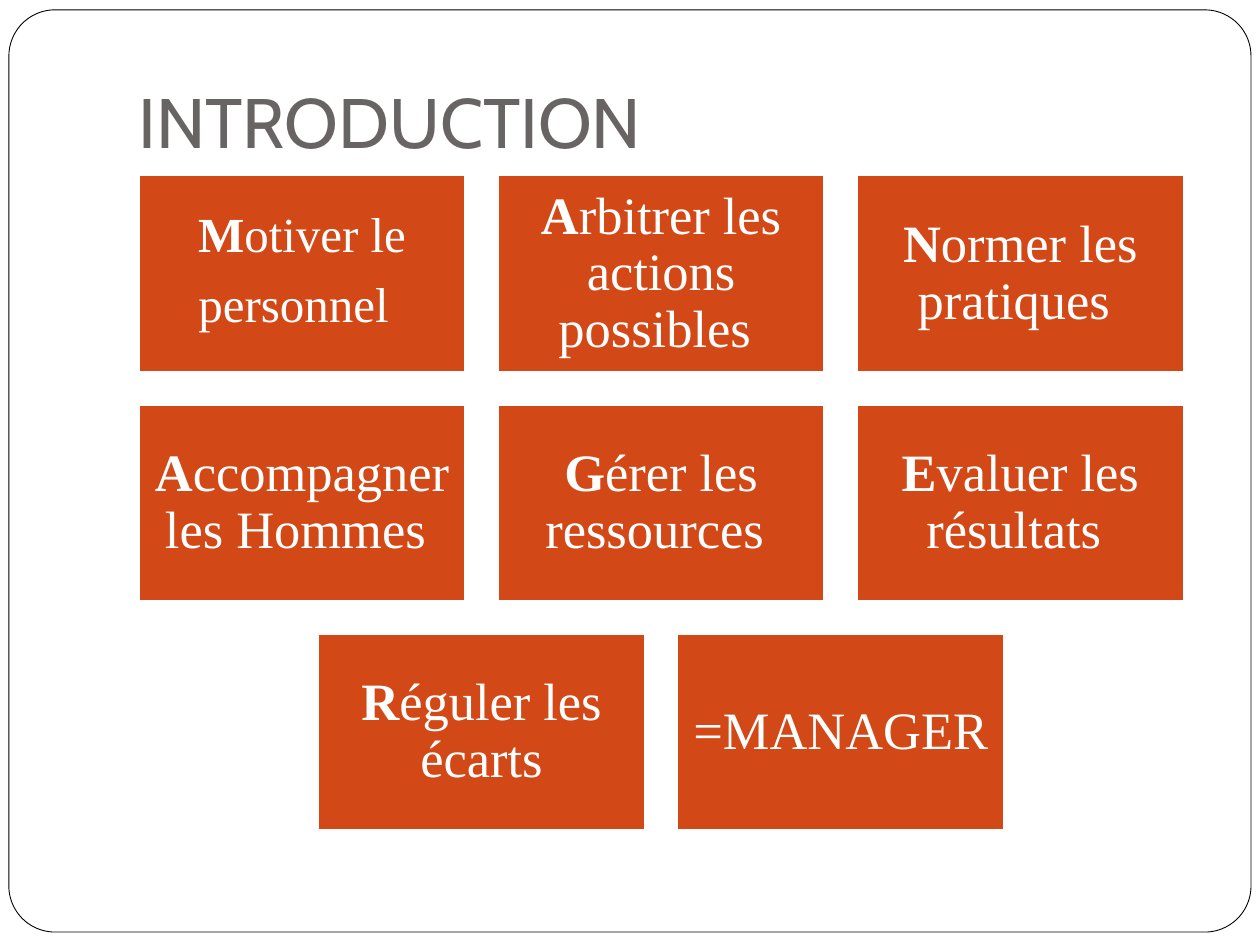
from pptx import Presentation
from pptx.dml.color import RGBColor
from pptx.enum.shapes import MSO_SHAPE
from pptx.enum.text import MSO_ANCHOR, MSO_AUTO_SIZE, PP_ALIGN
from pptx.util import Cm, Pt

COLORS = {"frame": "000000", "title": "696464", "box": "D34817", "white": "FFFFFF"}

TITLE_FRAME = {
    "word_wrap": True,
    "auto_size": MSO_AUTO_SIZE.NONE,
    "vertical_anchor": MSO_ANCHOR.BOTTOM,
    "margin_left": Cm(0.25),
    "margin_right": Cm(0.25),
    "margin_top": Cm(0.13),
    "margin_bottom": Cm(0.25),
}
BOX_FRAME = {
    "word_wrap": True,
    "vertical_anchor": MSO_ANCHOR.MIDDLE,
    "margin_left": Cm(0.3),
    "margin_right": Cm(0.3),
    "margin_top": Cm(0.3),
    "margin_bottom": Cm(0.3),
}
BOX_PARAGRAPH = {"alignment": PP_ALIGN.CENTER, "line_spacing": 0.9}

ROWS = [
    [
        [("M", 28, True), ("otiver le personnel", 28, False), (" ", 39, False)],
        [("A", 30, True), ("rbitrer les actions possibles ", 30, False)],
        [("N", 30, True), ("ormer les pratiques ", 30, False)],
    ],
    [
        [("A", 30, True), ("ccompagner les Hommes ", 30, False)],
        [("G", 30, True), ("érer les ressources ", 30, False)],
        [("E", 30, True), ("valuer les résultats ", 30, False)],
    ],
    [
        [("R", 30, True), ("éguler les écarts", 30, False)],
        [("=MANAGER", 30, False)],
    ],
]
BOX_WIDTH, BOX_HEIGHT, GAP = 6.58, 3.96, 0.66
GRID_CENTER, GRID_TOP = 13.33, 3.54


def set_values(target, values):
    for name, value in values.items():
        setattr(target, name, value)


def add_text(paragraph, text, font_name, size, color, bold=False):
    run = paragraph.add_run()
    run.text = text
    set_values(run.font, {"name": font_name, "size": Pt(size), "bold": bold})
    run.font.color.rgb = RGBColor.from_string(COLORS[color])


presentation = Presentation()
presentation.slide_width = Cm(25.4)
presentation.slide_height = Cm(19.05)
slide = presentation.slides.add_slide(presentation.slide_layouts[5])

frame = slide.shapes.add_shape(
    MSO_SHAPE.ROUNDED_RECTANGLE, Cm(0.18), Cm(0.2), Cm(25.04), Cm(18.59)
)
frame.adjustments[0] = 0.05
frame.shadow.inherit = False
frame.fill.background()
frame.line.color.rgb = RGBColor.from_string(COLORS["frame"])
frame.line.width = Pt(0.5)

title = slide.shapes.title
set_values(title, {"left": Cm(2.54), "top": Cm(0.33), "width": Cm(21.59), "height": Cm(3.2)})
set_values(title.text_frame, TITLE_FRAME)
title_paragraph = title.text_frame.paragraphs[0]
title_paragraph.alignment = PP_ALIGN.LEFT
add_text(title_paragraph, "INTRODUCTION", "Cabin", 40, "title")

for row_index, row in enumerate(ROWS):
    row_width = len(row) * BOX_WIDTH + (len(row) - 1) * GAP
    top = GRID_TOP + row_index * (BOX_HEIGHT + GAP)
    for column_index, pieces in enumerate(row):
        left = GRID_CENTER - row_width / 2 + column_index * (BOX_WIDTH + GAP)
        box = slide.shapes.add_shape(
            MSO_SHAPE.RECTANGLE, Cm(left), Cm(top), Cm(BOX_WIDTH), Cm(BOX_HEIGHT)
        )
        box.shadow.inherit = False
        box.fill.solid()
        box.fill.fore_color.rgb = RGBColor.from_string(COLORS["box"])
        box.line.color.rgb = RGBColor.from_string(COLORS["white"])
        box.line.width = Pt(1)
        set_values(box.text_frame, BOX_FRAME)
        paragraph = box.text_frame.paragraphs[0]
        set_values(paragraph, BOX_PARAGRAPH)
        for text, size, bold in pieces:
            add_text(paragraph, text, "Times New Roman", size, "white", bold)

presentation.save("out.pptx")
